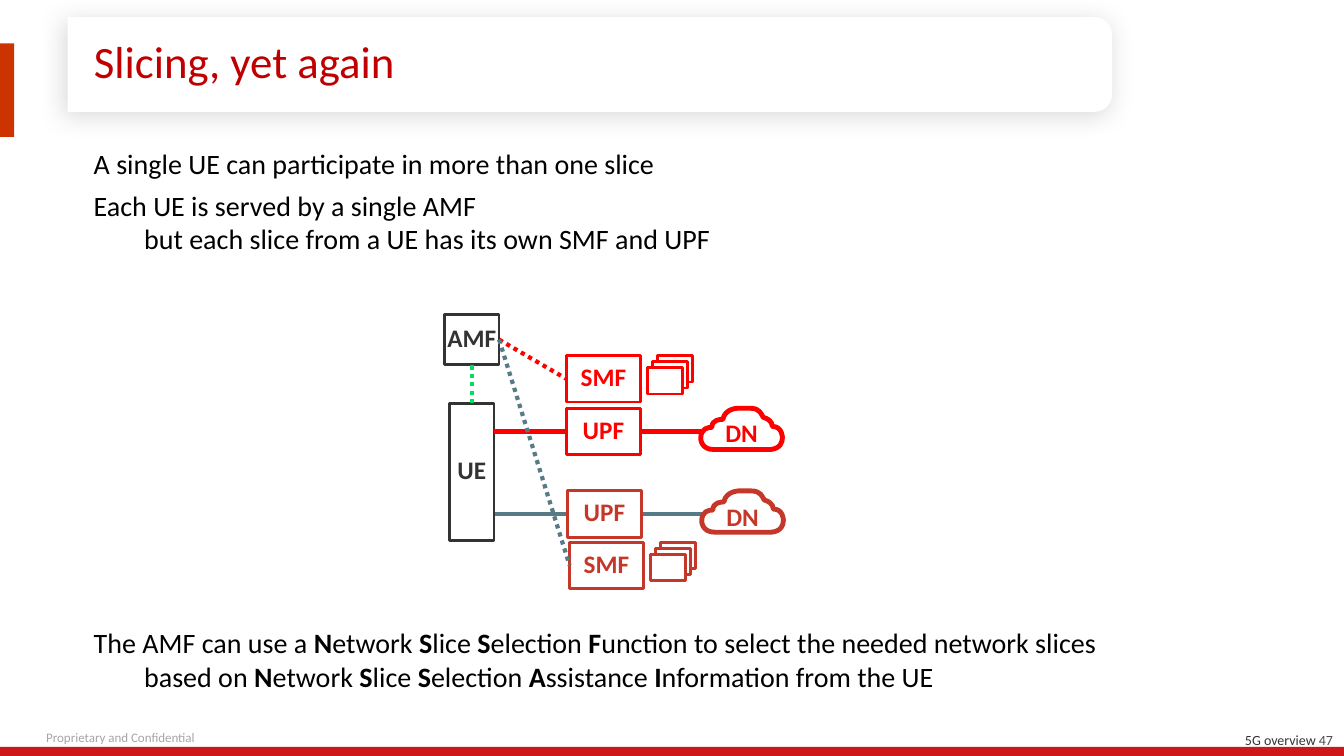
from lxml import etree
from pptx import Presentation
from pptx.dml.color import RGBColor
from pptx.enum.dml import MSO_LINE
from pptx.enum.shapes import MSO_CONNECTOR, MSO_SHAPE
from pptx.enum.text import MSO_ANCHOR, MSO_AUTO_SIZE, PP_ALIGN
from pptx.oxml.ns import qn
from pptx.util import Inches, Pt

RECT = MSO_SHAPE.RECTANGLE
ROUND_END = MSO_SHAPE.ROUND_2_SAME_RECTANGLE
STRAIGHT = MSO_CONNECTOR.STRAIGHT
DOTTED = MSO_LINE.ROUND_DOT
LEFT, CENTER, RIGHT = PP_ALIGN.LEFT, PP_ALIGN.CENTER, PP_ALIGN.RIGHT
MIDDLE, TOP = MSO_ANCHOR.MIDDLE, MSO_ANCHOR.TOP
FONT = "Calibri"
WHITE, BLACK, DARK = "FFFFFF", "000000", "333333"
RED, BRICK, SLATE, GREEN = "FF0000", "C53829", "577A87", "00DE64"
TOP_SIDE, LEFT_SIDE, BOTTOM_SIDE, RIGHT_SIDE = range(4)
NODE_W, NODE_H = 0.73, 0.46
# Cloud outline from its lower right: cubic segments, relative to its box
CLOUD_START = (0.69, 0.41)
CLOUD_CURVES = [
    ((0.79, 0.40), (0.81, 0.34), (0.81, 0.29)),
    ((0.81, 0.29), (0.81, 0.18), (0.71, 0.18)),
    ((0.71, 0.13), (0.66, 0.10), (0.62, 0.09)),
    ((0.60, 0.06), (0.59, 0), (0.49, 0)),
    ((0.49, 0), (0.37, 0), (0.37, 0)),
    ((0.37, 0), (0.24, 0), (0.22, 0.11)),
    ((0.20, 0.11), (0.11, 0.11), (0.11, 0.19)),
    ((0.07, 0.19), (0, 0.20), (0, 0.30)),
    ((0, 0.30), (0, 0.41), (0.13, 0.41)),
]


def rgb(hex_colour):
    return RGBColor.from_string(hex_colour)


def apply(target, values):
    for name, value in values.items():
        setattr(target, name, value)


def set_insets(frame, x=0, y=0):
    apply(frame, dict(margin_left=Inches(x), margin_right=Inches(x),
                      margin_top=Inches(y), margin_bottom=Inches(y)))


def add_run(paragraph, text, size, colour, bold=False):
    run = paragraph.add_run()
    run.text = text
    apply(run.font, dict(name=FONT, size=Pt(size), bold=bold))
    run.font.color.rgb = rgb(colour)


def style_shape(shape, line=None, width=2):
    shape.shadow.inherit = False
    shape.fill.solid()
    shape.fill.fore_color.rgb = rgb(WHITE)
    if line:
        shape.line.color.rgb = rgb(line)
        shape.line.width = Pt(width)
    else:
        shape.line.fill.background()


def add_box(slide, box, line=None, fill=WHITE, kind=RECT):
    shape = slide.shapes.add_shape(kind, *map(Inches, box))
    style_shape(shape, line)
    shape.fill.fore_color.rgb = rgb(fill)
    return shape


def add_label(shape, text, colour, top_inset=0):
    frame = shape.text_frame
    set_insets(frame)
    apply(frame, dict(word_wrap=False, vertical_anchor=MIDDLE,
                      margin_top=Inches(top_inset)))
    paragraph = frame.paragraphs[0]
    apply(paragraph, dict(alignment=CENTER, line_spacing=0.85))
    add_run(paragraph, text, 18, colour, bold=True)


def add_link(slide, start, end, colour, dash=None, joins=None):
    """Line between two points; joins holds (shape, side) for each end."""
    link = slide.shapes.add_connector(STRAIGHT, *map(Inches, (*start, *end)))
    if joins:
        link.begin_connect(*joins[0])
        link.end_connect(*joins[1])
    link.line.color.rgb = rgb(colour)
    link.line.width = Pt(3)
    if dash:
        link.line.dash_style = dash
    etree.SubElement(link._element.spPr, qn("a:effectLst"))


def add_cloud(slide, left, top, colour, label_inset):
    """Lays out the segment ends, then bends each segment into a curve."""
    builder = slide.shapes.build_freeform(
        Inches(left + CLOUD_START[0]), Inches(top + CLOUD_START[1]))
    builder.add_line_segments([(Inches(left + x), Inches(top + y))
                               for _, _, (x, y) in CLOUD_CURVES], close=True)
    cloud = builder.convert_to_shape()
    segments = list(cloud._element.iter(qn("a:lnTo")))
    for segment, (*controls, _) in zip(segments, CLOUD_CURVES):
        segment.tag = qn("a:cubicBezTo")
        for place, (x, y) in enumerate(controls):
            control = etree.Element(qn("a:pt"), x=str(Inches(x)),
                                    y=str(Inches(y)))
            segment.insert(place, control)
    style_shape(cloud, colour, 3.5)
    add_label(cloud, "DN", colour, label_inset)


def add_soft_shadow(shape):
    effects = shape._element.spPr.find(qn("a:effectLst"))
    shadow = etree.SubElement(
        effects, qn("a:outerShdw"), blurRad=str(Pt(17)), dist=str(Pt(3)),
        dir=str(135 * 60000), algn="tl", rotWithShape="0")
    colour = etree.SubElement(shadow, qn("a:srgbClr"), val=DARK)
    etree.SubElement(colour, qn("a:alpha"), val="19000")


def add_footer_note(slide, box, pieces, alignment):
    frame = slide.shapes.add_textbox(*map(Inches, box)).text_frame
    frame.word_wrap = False
    paragraph = frame.paragraphs[0]
    paragraph.alignment = alignment
    for text, size, colour in pieces:
        add_run(paragraph, text, size, colour)


def add_frame(slide, width, height):
    add_box(slide, (0, height - 0.09, width, 0.1), fill="CD1719")
    add_footer_note(slide, (0.36, height - 0.31, 1.71, 0.26),
                    [("Proprietary and Confidential", 9.3, "A6A6A6")], LEFT)
    card = add_box(slide, (5.38, -4.54, 0.94, 10.36), kind=ROUND_END)
    card.rotation = 90
    card.adjustments[0] = 0.184
    card.adjustments[1] = 0
    add_soft_shadow(card)
    add_footer_note(slide, (width - 1.15, height - 0.29, 1.14, 0.27),
                    [("5G overview ", 10, DARK), ("47", 10, "4D4D4D")], RIGHT)
    add_box(slide, (0, 0.43, 0.14, 0.93), fill="CC3300")


def add_title(slide, box, text):
    title = slide.shapes.title
    slide.shapes._spTree.append(title._element)  # in front of the card
    left, top, width, height = map(Inches, box)
    apply(title, dict(left=left, top=top, width=width, height=height))
    frame = title.text_frame
    set_insets(frame)
    apply(frame, dict(auto_size=MSO_AUTO_SIZE.NONE, vertical_anchor=MIDDLE))
    paragraph = frame.paragraphs[0]
    apply(paragraph, dict(alignment=LEFT, line_spacing=0.85))
    add_run(paragraph, text, 32, "C00000")


def add_statements(slide, box, statements):
    """Takes (text, indent, space before); *stars* enclose bold letters."""
    frame = slide.shapes.add_textbox(*map(Inches, box)).text_frame
    set_insets(frame, y=0.05)
    apply(frame, dict(word_wrap=True, vertical_anchor=TOP))
    for index, (text, indent, before) in enumerate(statements):
        paragraph = frame.add_paragraph() if index else frame.paragraphs[0]
        paragraph._p.get_or_add_pPr().set("marL", str(Inches(indent)))
        paragraph.space_before = Pt(before)
        for part, piece in enumerate(text.split("*")):
            add_run(paragraph, piece, 20, BLACK, bold=part % 2 == 1)


def add_slice(slide, left, top, smf_offset, colour, link_colour, label_inset):
    """Draws UPF at left, top with its link, cloud and SMF; returns the SMF."""
    middle = top + NODE_H / 2
    add_link(slide, (left - 0.72, middle), (left + 1.33, middle), link_colour)
    upf = add_box(slide, (left, top, NODE_W, NODE_H), colour)
    add_label(upf, "UPF", colour)
    smf_left, smf_top = left + smf_offset[0], top + smf_offset[1]
    smf = add_box(slide, (smf_left, smf_top, NODE_W, NODE_H), colour)
    add_label(smf, "SMF", colour)
    add_cloud(slide, left + 1.33, top, colour, label_inset)
    for depth in (2, 1, 0):
        add_box(slide, (smf_left + 0.8 + 0.05 * depth,
                        smf_top + 0.12 - 0.06 * depth, 0.35, 0.26), colour)
    return smf


def add_slicing_diagram(slide, left, top):
    ue = add_box(slide, (left + 0.05, top + 0.88, 0.44, 1.36), DARK)
    add_label(ue, "UE", DARK)
    amf = add_box(slide, (left, top, 0.54, 0.5), DARK)
    add_label(amf, "AMF", DARK)
    red_smf = add_slice(slide, left + 1.21, top + 0.93, (0, -0.52),
                        RED, RED, 0.12)
    brick_smf = add_slice(slide, left + 1.22, top + 1.75, (0.02, 0.51),
                          BRICK, SLATE, 0.15)
    for colour, start, end in (
            (GREEN, (ue, TOP_SIDE), (amf, BOTTOM_SIDE)),
            (RED, (amf, RIGHT_SIDE), (red_smf, LEFT_SIDE)),
            (SLATE, (amf, RIGHT_SIDE), (brick_smf, LEFT_SIDE))):
        add_link(slide, (left, top), (left, top), colour, DOTTED, (start, end))


deck = Presentation()
deck.slide_width, deck.slide_height = Inches(13.33), Inches(7.5)
slicing = deck.slides.add_slide(deck.slide_layouts[5])
add_frame(slicing, 13.33, 7.5)
add_title(slicing, (0.93, 0.29, 9.75, 0.71), "Slicing, yet again")
add_statements(slicing, (0.93, 1.4, 11.96, 5.58), [
    ("A single UE can participate in more than one slice", 0, 0),
    ("Each UE is served by a single AMF", 0, 6),
    ("but each slice from a UE has its own SMF and UPF", 0.5, 0),
    ("The AMF can use a *N*etwork *S*lice *S*election *F*unction "
     "to select the needed network slices", 0, 264.5),
    ("based on *N*etwork *S*lice *S*election *A*ssistance "
     "*I*nformation from the UE", 0.5, 0)])
add_slicing_diagram(slicing, 4.41, 3.12)
deck.save("out.pptx")
